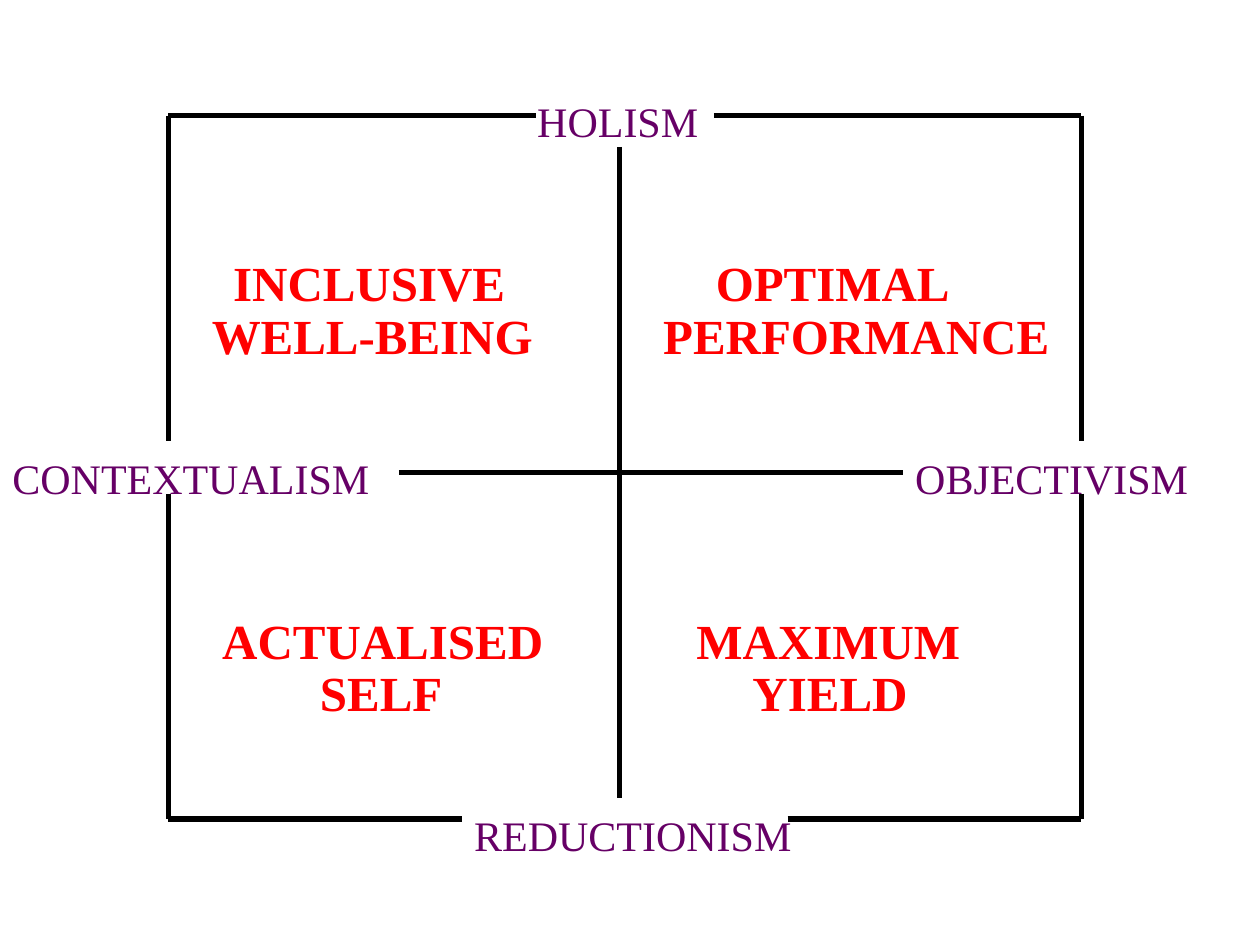
from pptx import Presentation
from pptx.dml.color import RGBColor
from pptx.enum.shapes import MSO_CONNECTOR
from pptx.enum.text import MSO_AUTO_SIZE
from pptx.oxml.ns import qn
from pptx.util import Cm, Pt
from lxml.etree import SubElement

COLORS = {"line": "000000", "pole": "660066", "quadrant": "FF0000"}
FONT = "Times New Roman"

# Text kinds: size in points, bold, box height in cm
STYLES = {"pole": (24, False, 1.27), "quadrant": (28, True, 1.45)}

# Frame and axes, in cm
LEFT, RIGHT, TOP, BOTTOM = 3.39, 21.8, 2.33, 16.51
AXIS_X, AXIS_Y = 12.49, 9.53

# Gaps left for the pole names
TOP_GAP, BOTTOM_GAP, SIDE_GAP = (10.8, 14.39), (9.31, 15.88), (8.89, 9.95)
AXIS_SPAN_X, AXIS_SPAN_Y = (8.04, 18.2), (2.96, 16.09)

# Text rows of the upper and lower quadrants
UPPER, LOWER = (4.87, 5.93), (12.07, 13.13)

# Text, left, top, width, wrap
POLES = [
    ("HOLISM", 10.58, 1.7, 6.13, True),
    ("REDUCTIONISM", 9.31, 16.09, 12.07, True),
    ("CONTEXTUALISM", 0, 8.89, 11.64, True),
    ("OBJECTIVISM", 18.2, 8.89, 6.02, False),
]

# Rows, then text, left, width for each line
QUADRANTS = [
    (UPPER, [("INCLUSIVE", 4.45, 8.04), ("WELL-BEING", 4.02, 8.47)]),
    (UPPER, [("OPTIMAL", 14.18, 9.53), ("PERFORMANCE", 13.12, 11.64)]),
    (LOWER, [("ACTUALISED", 4.23, 8.26), ("SELF", 6.2, 6.93)]),
    (LOWER, [("MAXIMUM", 13.79, 7.58), ("YIELD", 14.92, 6.24)]),
]


def add_line(page, x1, y1, x2, y2):
    line = page.shapes.add_connector(
        MSO_CONNECTOR.STRAIGHT, Cm(x1), Cm(y1), Cm(x2), Cm(y2))
    line.line.color.rgb = RGBColor.from_string(COLORS["line"])
    line.line.width = Pt(3)
    SubElement(line._element.spPr, qn("a:effectLst"))


def add_label(page, kind, text, left, top, width, wrap=True):
    size, bold, height = STYLES[kind]
    box = page.shapes.add_textbox(Cm(left), Cm(top), Cm(width), Cm(height))
    frame = box.text_frame
    frame.text = text
    frame.word_wrap = wrap
    frame.auto_size = MSO_AUTO_SIZE.SHAPE_TO_FIT_TEXT
    frame.margin_top = Cm(0.23)
    frame.margin_bottom = Cm(0.13)
    font = frame.paragraphs[0].runs[0].font
    font.name, font.size, font.bold = FONT, Pt(size), bold
    font.color.rgb = RGBColor.from_string(COLORS[kind])


def main():
    deck = Presentation()
    deck.slide_width, deck.slide_height = Cm(25.4), Cm(19.05)
    page = deck.slides.add_slide(deck.slide_layouts[6])

    # Axes, each in two halves or one piece
    add_line(page, AXIS_SPAN_X[0], AXIS_Y, AXIS_SPAN_X[1], AXIS_Y)
    for end in AXIS_SPAN_Y:
        add_line(page, AXIS_X, min(end, AXIS_Y), AXIS_X, max(end, AXIS_Y))

    # Frame sides, each broken by a gap
    for y, (start, end) in ((TOP, TOP_GAP), (BOTTOM, BOTTOM_GAP)):
        add_line(page, LEFT, y, start, y)
        add_line(page, end, y, RIGHT, y)
    for x in (LEFT, RIGHT):
        add_line(page, x, TOP, x, SIDE_GAP[0])
        add_line(page, x, SIDE_GAP[1], x, BOTTOM)

    # Pole names and quadrant titles
    for pole in POLES:
        add_label(page, "pole", *pole)
    for rows, lines in QUADRANTS:
        for top, (text, left, width) in zip(rows, lines):
            add_label(page, "quadrant", text, left, top, width)

    deck.save("out.pptx")


if __name__ == "__main__":
    main()
